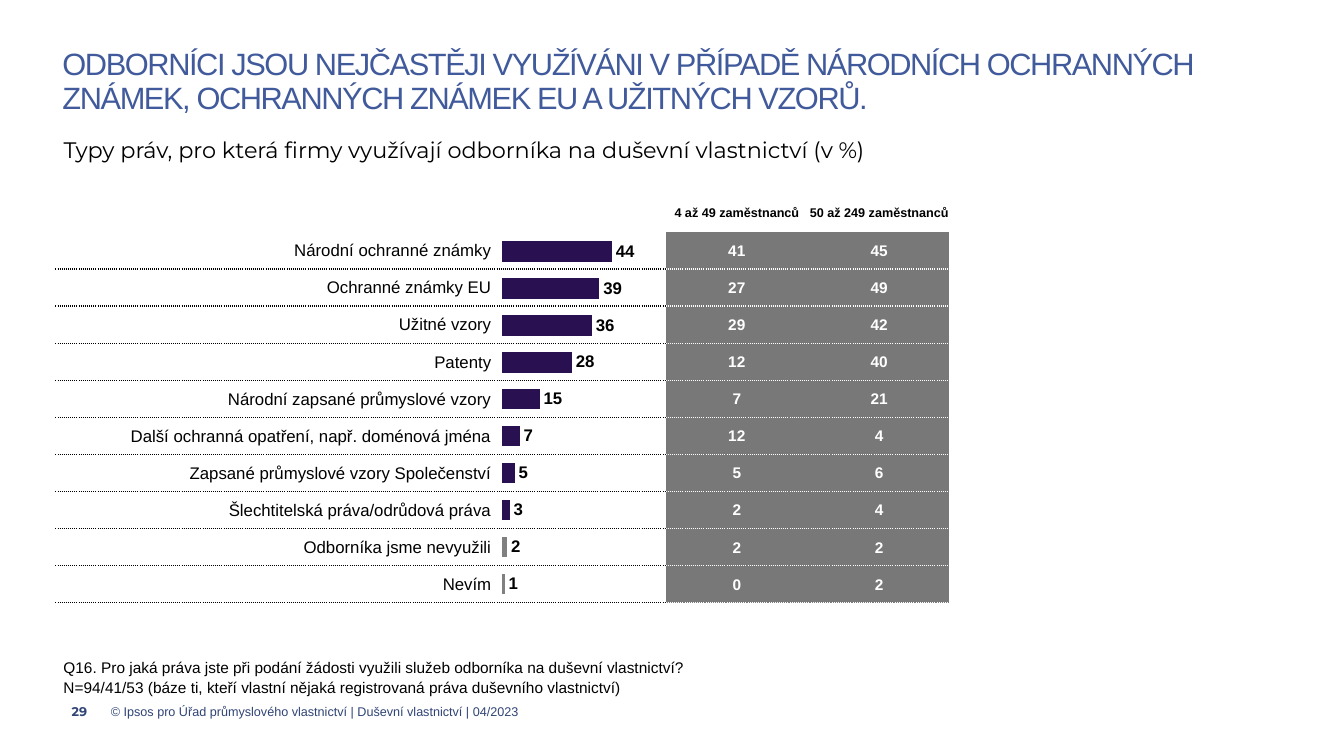
import dataclasses
import typing

import lxml.etree
import pptx
import pptx.chart.data
import pptx.dml.color
import pptx.enum.chart
import pptx.enum.text
import pptx.oxml
import pptx.oxml.ns
import pptx.util

ALIGN = pptx.enum.text.PP_ALIGN
ANCHOR = pptx.enum.text.MSO_ANCHOR
WIDTH, HEIGHT = pptx.util.Inches(13.33), pptx.util.Inches(7.5)
BLACK, WHITE, GREY = "000000", "FFFFFF", "787878"
DARK_BLUE, BAR, BAR_OTHER = "304475", "281051", "808080"


@dataclasses.dataclass(frozen=True)
class Area:
    """Place and size in percent of the slide."""
    left: float
    top: float
    width: float
    height: float

    def place(self) -> tuple[int, int, int, int]:
        return (across(self.left), down(self.top), across(self.width), down(self.height))


@dataclasses.dataclass(frozen=True)
class Style:
    size: float
    colour: str = BLACK
    bold: bool = False
    font: str = "Arial"
    tracking: float = 0


@dataclasses.dataclass(frozen=True)
class Note:
    area: Area
    lines: tuple[str, ...]
    style: Style
    insets: tuple[float, float, float, float]  # inches: left, top, right, bottom
    anchor: ANCHOR = ANCHOR.TOP
    spacing: typing.Any = None


@dataclasses.dataclass(frozen=True)
class Right:
    label: str
    total: int
    small: int
    medium: int
    bar: str = BAR


RIGHTS = (
    Right("Národní ochranné známky", 44, 41, 45),
    Right("Ochranné známky EU", 39, 27, 49),
    Right("Užitné vzory", 36, 29, 42),
    Right("Patenty", 28, 12, 40),
    Right("Národní zapsané průmyslové vzory", 15, 7, 21),
    Right("Další ochranná opatření, např. doménová jména", 7, 12, 4),
    Right("Zapsané průmyslové vzory Společenství", 5, 5, 6),
    Right("Šlechtitelská práva/odrůdová práva", 3, 2, 4),
    Right("Odborníka jsme nevyužili", 2, 2, 2, BAR_OTHER),
    Right("Nevím", 1, 0, 2, BAR_OTHER),
)
HEADINGS = ("", "", "4 až 49 zaměstnanců", "50 až 249 zaměstnanců")
COLUMNS = (32.5, 12.9, 10.6, 10.6)
HEADER_ROW, BODY_ROW = 5.07, 4.91
LINE = pptx.util.Pt(14)

TITLE = Note(
    Area(3.3, 5.87, 91.95, 10.27),
    ("ODBORNÍCI JSOU NEJČASTĚJI VYUŽÍVÁNI V PŘÍPADĚ NÁRODNÍCH OCHRANNÝCH ZNÁMEK, "
     "OCHRANNÝCH ZNÁMEK EU A UŽITNÝCH VZORŮ.",),
    Style(22, "405A9C", tracking=-1), (0.18, 0.05, 0.18, 0.05), spacing=0.9)
NOTES = (
    Note(Area(4.73, 91.47, 2.93, 5.33), ("29",),
         Style(9, DARK_BLUE, True, "Montserrat"), (0.08, 0.05, 0, 0.05), ANCHOR.MIDDLE),
    Note(Area(4.73, 18.93, 85.8, 2.8),
         ("Typy práv, pro která firmy využívají odborníka na duševní vlastnictví (v %)",),
         Style(16, font="Montserrat"), (0, 0, 0, 0), spacing=LINE),
    Note(Area(3.98, 86.27, 85.2, 6.4),
         ("Q16. Pro jaká práva jste při podání žádosti využili služeb odborníka na duševní vlastnictví?",
          "N=94/41/53 (báze ti, kteří vlastní nějaká registrovaná práva duševního vlastnictví)"),
         Style(11), (0.1, 0.05, 0.1, 0.05), spacing=LINE),
    Note(Area(8.25, 91.47, 75.53, 5.33),
         ("© Ipsos pro Úřad průmyslového vlastnictví | Duševní vlastnictví | 04/2023",),
         Style(9, DARK_BLUE), (0, 0.05, 0, 0.05), ANCHOR.MIDDLE),
)


def across(percent: float) -> int:
    return round(WIDTH * percent / 100)


def down(percent: float) -> int:
    return round(HEIGHT * percent / 100)


def colour(value: str) -> pptx.dml.color.RGBColor:
    return pptx.dml.color.RGBColor.from_string(value)


def write(para: typing.Any, text: str, style: Style, align: ALIGN) -> None:
    para.alignment = align
    span = para.add_run()
    span.text = text
    span.font.name, span.font.size = style.font, pptx.util.Pt(style.size)
    span.font.bold, span.font.color.rgb = style.bold, colour(style.colour)
    if style.tracking:
        span.font._element.set("spc", str(round(style.tracking * 100)))


def fill_note(box: typing.Any, note: Note) -> None:
    box.left, box.top, box.width, box.height = note.area.place()
    frame = box.text_frame
    frame.word_wrap, frame.vertical_anchor = True, note.anchor
    frame.auto_size = pptx.enum.text.MSO_AUTO_SIZE.NONE
    (frame.margin_left, frame.margin_top,
     frame.margin_right, frame.margin_bottom) = map(pptx.util.Inches, note.insets)
    for index, text in enumerate(note.lines):
        para = frame.add_paragraph() if index else frame.paragraphs[0]
        para.line_spacing = note.spacing
        write(para, text, note.style, ALIGN.LEFT)


def set_borders(cell: typing.Any, lines: dict[str, tuple[str, float, str]]) -> None:
    """Draw the named edges and hide the rest; borders precede the cell fill."""
    namespace = pptx.oxml.ns.nsdecls("a")
    properties = cell._tc.get_or_add_tcPr()
    for index, edge in enumerate(("L", "R", "T", "B")):
        if edge in lines:
            value, points, dash = lines[edge]
            xml = (f'<a:ln{edge} {namespace} w="{pptx.util.Pt(points)}"><a:solidFill>'
                   f'<a:srgbClr val="{value}"/></a:solidFill><a:prstDash val="{dash}"/></a:ln{edge}>')
        else:
            xml = f'<a:ln{edge} {namespace} w="0"><a:noFill/></a:ln{edge}>'
        properties.insert(index, pptx.oxml.parse_xml(xml))


def add_rights_table(page: typing.Any) -> None:
    area = Area(4.13, 25.6, sum(COLUMNS), HEADER_ROW + BODY_ROW * len(RIGHTS))
    table = page.shapes.add_table(len(RIGHTS) + 1, len(COLUMNS), *area.place()).table
    table.first_row = table.horz_banding = False
    for column, width in zip(table.columns, COLUMNS):
        column.width = across(width)
    contents = [HEADINGS] + [(r.label, "", str(r.small), str(r.medium)) for r in RIGHTS]
    for row_index, texts in enumerate(contents):
        header = row_index == 0
        table.rows[row_index].height = down(HEADER_ROW if header else BODY_ROW)
        for column_index, text in enumerate(texts):
            cell = table.cell(row_index, column_index)
            cell.vertical_anchor = ANCHOR.MIDDLE
            cell.margin_left = cell.margin_right = cell.margin_top = pptx.util.Inches(0.01)
            cell.margin_bottom = 0
            shaded = not header and column_index >= 2
            if shaded:
                cell.fill.solid()
                cell.fill.fore_color.rgb = colour(GREY)
            else:
                cell.fill.background()
            dotted = (WHITE if shaded else BLACK, 1, "sysDot")
            lines = {} if header else {"B": dotted}
            if row_index > 1:
                lines["T"] = dotted
            if column_index == 3:
                lines["R"] = (WHITE, 2.25, "solid")
            set_borders(cell, lines)
            if text:
                style = Style(9, bold=True) if header else Style(11, WHITE, True) if shaded else Style(12)
                align = ALIGN.RIGHT if column_index == 0 else ALIGN.CENTER
                write(cell.text_frame.paragraphs[0], text, style, align)


def add_totals_chart(page: typing.Any) -> None:
    data = pptx.chart.data.CategoryChartData()
    data.categories = [str(number) for number in range(1, len(RIGHTS) + 1)]
    data.add_series("Series 1", [right.total for right in RIGHTS])
    chart = page.shapes.add_chart(pptx.enum.chart.XL_CHART_TYPE.BAR_CLUSTERED,
                                  *Area(35.03, 24, 19.95, 55.73).place(), data).chart
    chart.has_legend = chart.has_title = False
    chart.font.name, chart.font.size = "Arial", pptx.util.Pt(11)
    chart.font.color.rgb = colour(BLACK)
    chart.category_axis.reverse_order = True
    values = chart.value_axis
    values.minimum_scale, values.maximum_scale, values.major_unit = 0, 95, 20
    values.has_major_gridlines = False
    chart.category_axis.visible = values.visible = False

    # Bars and their labels
    plot = chart.plots[0]
    plot.gap_width, plot.vary_by_categories = 80, False
    series = plot.series[0]
    for fill, value in [(series.format.fill, BAR)] + [
            (series.points[index].format.fill, right.bar)
            for index, right in enumerate(RIGHTS) if right.bar != BAR]:
        fill.solid()
        fill.fore_color.rgb = colour(value)
    labels = series.data_labels
    labels.show_value, labels.number_format, labels.number_format_is_linked = True, "#,##0", False
    labels.position = pptx.enum.chart.XL_LABEL_POSITION.OUTSIDE_END
    labels.font.name, labels.font.size, labels.font.bold = "Arial", pptx.util.Pt(12), True
    labels.font.color.rgb = colour(BLACK)

    # Fixed plot area, transparent background
    name = pptx.oxml.ns.qn
    plot_area = chart._chartSpace.chart.plotArea
    for old in plot_area.findall(name("c:layout")):
        plot_area.remove(old)
    layout = lxml.etree.Element(name("c:layout"))
    manual = lxml.etree.SubElement(layout, name("c:manualLayout"))
    for tag, value in (("layoutTarget", "inner"), ("xMode", "edge"), ("yMode", "edge"),
                       ("x", "0.117"), ("y", "0.122"), ("w", "0.883"), ("h", "0.878")):
        lxml.etree.SubElement(manual, name(f"c:{tag}")).set("val", value)
    plot_area.insert(0, layout)
    chart._chartSpace.chart.addnext(pptx.oxml.parse_xml(
        f'<c:spPr {pptx.oxml.ns.nsdecls("c", "a")}><a:noFill/><a:ln><a:noFill/></a:ln></c:spPr>'))


def main() -> None:
    deck = pptx.Presentation()
    deck.slide_width, deck.slide_height = WIDTH, HEIGHT
    page = deck.slides.add_slide(deck.slide_layouts[5])
    add_rights_table(page)
    add_totals_chart(page)
    fill_note(page.shapes.title, TITLE)
    for note in NOTES:
        fill_note(page.shapes.add_textbox(*note.area.place()), note)
    deck.save("out.pptx")


if __name__ == "__main__":
    main()
